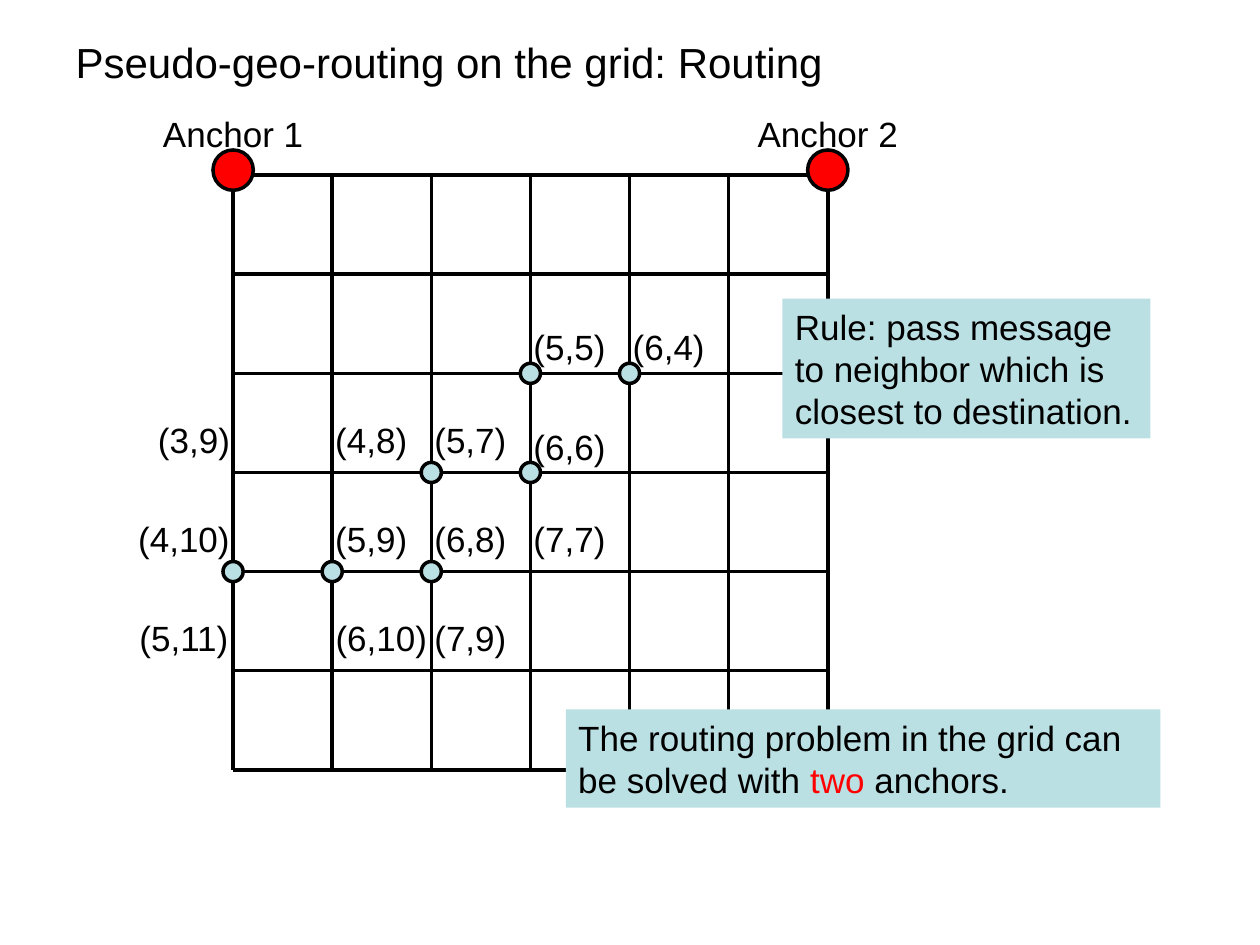
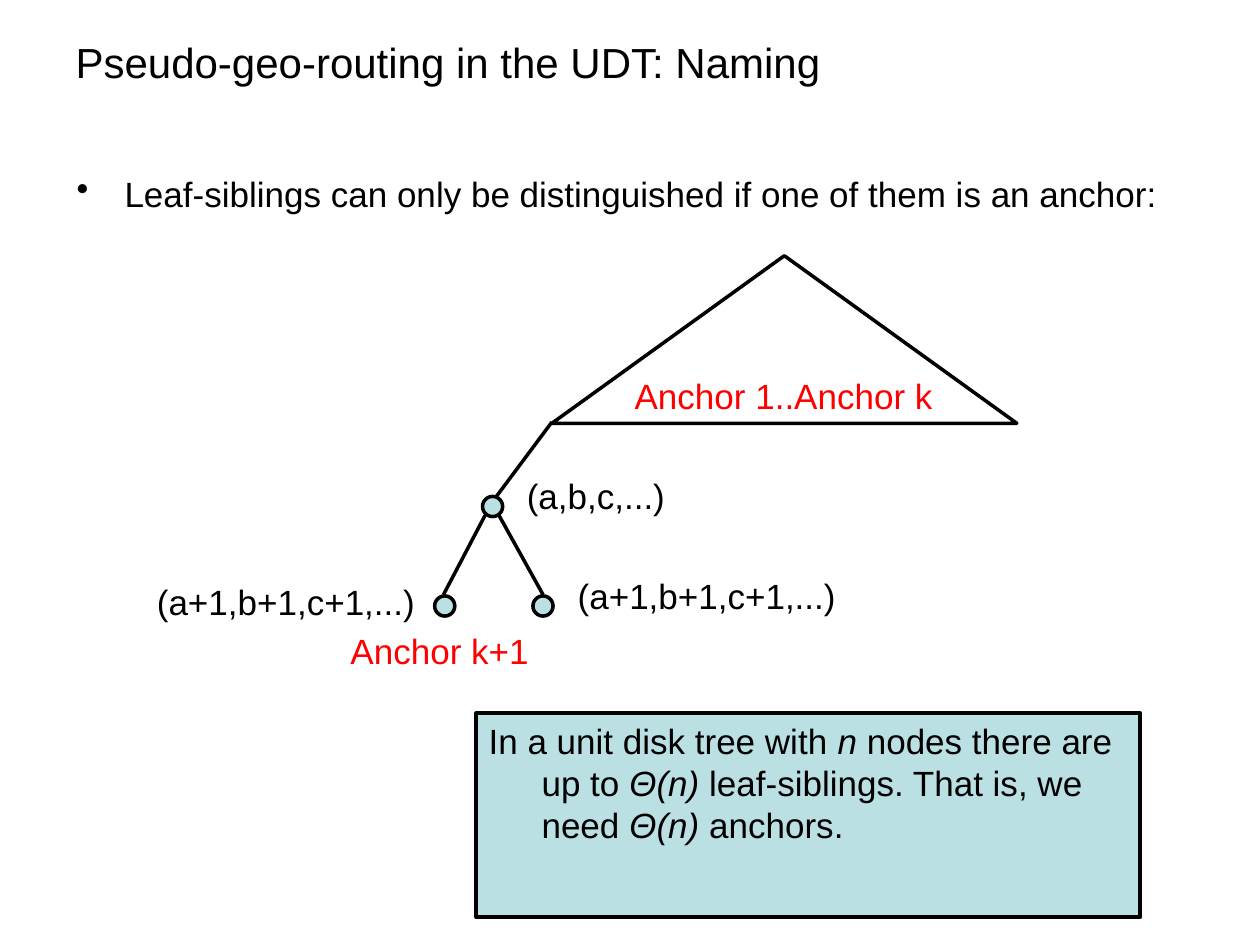
from lxml import etree
from pptx import Presentation
from pptx.dml.color import RGBColor
from pptx.enum.shapes import MSO_CONNECTOR, MSO_SHAPE
from pptx.enum.text import MSO_ANCHOR, PP_ALIGN
from pptx.oxml.ns import qn
from pptx.util import Inches, Pt

LEFT, CENTER = PP_ALIGN.LEFT, PP_ALIGN.CENTER
TOP, MIDDLE = MSO_ANCHOR.TOP, MSO_ANCHOR.MIDDLE
OVAL, RECT, PEAK = MSO_SHAPE.OVAL, MSO_SHAPE.RECTANGLE, MSO_SHAPE.ISOSCELES_TRIANGLE
STRAIGHT = MSO_CONNECTOR.STRAIGHT

FONT = "Arial"
BLACK, RED, PALE = "000000", "FF0000", "BBE0E3"
WIDE, HIGH = 10, 7.5  # slide size in columns and rows of one inch
NODE, ANCHOR = 0.16, 0.32
LABEL_W, LABEL_H = 1.42, 0.44

# the routing grid
CELLS = 6
SPAN = 4.72
GRID_X, GRID_Y = 1.85, 1.39
ROUTE = [(0, 4), (1, 4), (2, 4), (2, 3), (3, 3), (3, 2), (4, 2)]
NAMED = ROUTE + [(0, 3), (1, 3), (3, 4), (0, 5), (1, 5), (2, 5)]
LOW = [(3, 3), (3, 2), (4, 2)]  # nodes whose label sits closer to the line


def color(code):
    return RGBColor.from_string(code)


def place(shape, left, top, width, height):
    shape.left, shape.top = Inches(left), Inches(top)
    shape.width, shape.height = Inches(width), Inches(height)


def write(frame, runs, size=20, align=LEFT, anchor=MIDDLE, ink=BLACK, hang=0, bullet=None):
    """Fill a frame with one paragraph of (text, colour, italic) runs."""
    frame.word_wrap = True
    frame.vertical_anchor = anchor
    para = frame.paragraphs[0]
    if hang:
        props = para._p.get_or_add_pPr()
        props.set("marL", str(Inches(hang)))
        props.set("indent", str(-Inches(hang)))
        if bullet:
            etree.SubElement(props, qn("a:buChar")).set("char", bullet)
    para.alignment = align
    para.font.name, para.font.size = FONT, Pt(size)
    para.font.color.rgb = color(ink)
    for text, tint, slant in runs:
        run = para.add_run()
        run.text = text
        if tint:
            run.font.color.rgb = color(tint)
        if slant:
            run.font.italic = True


def plain(text):
    return [(text, None, False)]


def start(deck, title):
    slide = deck.slides.add_slide(deck.slide_layouts[5])
    head = slide.shapes.title
    place(head, 0.05 * WIDE, 0.22, 0.9 * WIDE, 0.54)
    write(head.text_frame, plain(title), size=24)
    return slide


def shape(slide, kind, box, fill=None, edge=True):
    item = slide.shapes.add_shape(kind, *map(Inches, box))
    item.shadow.inherit = False
    if fill:
        item.fill.solid()
        item.fill.fore_color.rgb = color(fill)
    else:
        item.fill.background()
    if edge:
        item.line.color.rgb = color(BLACK)
        item.line.width = Pt(2)
    else:
        item.line.fill.background()
    return item


def dot(slide, x, y, size=NODE, fill=PALE):
    shape(slide, OVAL, (x - size / 2, y - size / 2, size, size), fill)


def line(slide, x1, y1, x2, y2):
    item = slide.shapes.add_connector(STRAIGHT, *map(Inches, (x1, y1, x2, y2)))
    item.line.color.rgb = color(BLACK)
    item.line.width = Pt(2)
    etree.SubElement(item._element.spPr, qn("a:effectLst"))


def label(slide, text, x, y, width=LABEL_W, ink=BLACK):
    """Write a label centred on the point x, y."""
    box = map(Inches, (x - width / 2, y - LABEL_H / 2, width, LABEL_H))
    item = slide.shapes.add_textbox(*box)
    write(item.text_frame, plain(text), align=CENTER, ink=ink)


def note(slide, box, runs, edge=False, **style):
    item = shape(slide, RECT, box, PALE, edge)
    write(item.text_frame, runs, **style)


def spot(col, row):
    step = SPAN / CELLS
    return GRID_X + col * step, GRID_Y + row * step


def name(slide, col, row):
    """Label a grid node with its hop counts to both anchors."""
    text = f"({col + row},{CELLS - col + row})"
    shift = 0.39 if len(text) > 5 else 0.31
    x, y = spot(col, row)
    lift = 0.21 if (col, row) in LOW else 0.26
    label(slide, text, x + (shift if col else -shift), y - lift)


def routing(deck):
    slide = start(deck, "Pseudo-geo-routing on the grid: Routing")
    for i in range(CELLS + 1):
        line(slide, *spot(i, 0), *spot(i, CELLS))
        line(slide, *spot(0, i), *spot(CELLS, i))
    for number, col in enumerate((0, CELLS), 1):
        x, y = spot(col, 0)
        dot(slide, x, y - 0.04, ANCHOR, RED)
        label(slide, f"Anchor {number}", x, y - 0.33)
    for node in ROUTE:
        dot(slide, *spot(*node))
    for node in NAMED:
        name(slide, *node)
    note(slide, (6.21, 2.37, 2.92, 1.11),
         plain("Rule: pass message to neighbor which is closest to destination."))
    note(slide, (4.49, 5.63, 4.72, 0.78), [
        ("The routing problem in the grid can be solved with ", None, False),
        ("two ", RED, False),
        ("anchors.", None, False),
    ])


def naming(deck):
    slide = start(deck, "Pseudo-geo-routing in the UDT: Naming")
    body = slide.shapes.add_textbox(*map(Inches, (0.51, 1.32, 8.98, 0.44)))
    write(body.text_frame,
          plain("Leaf-siblings can only be distinguished if one of them is an anchor:"),
          anchor=TOP, hang=0.38, bullet="•")

    for x, y in [(4.31, 4.81), (3.53, 4.81), (3.91, 4.02)]:
        dot(slide, x, y)
    line(slide, 3.52, 4.72, 3.85, 4.09)
    line(slide, 4.31, 4.72, 3.96, 4.09)
    line(slide, 3.94, 3.94, 4.38, 3.35)
    shape(slide, PEAK, (4.38, 2.03, 3.69, 1.33))

    leaf = "(a+1,b+1,c+1,...)"
    label(slide, "(a,b,c,...)", 4.73, 3.93, 2.66)
    label(slide, leaf, 5.61, 4.73, 2.66)
    label(slide, leaf, 2.27, 4.77, 2.66)
    label(slide, "Anchor k+1", 3.49, 5.16, 2.36, RED)
    label(slide, "Anchor 1..Anchor k", 6.22, 3.14, 2.81, RED)
    note(slide, (3.78, 5.66, 5.27, 1.62), [
        ("In a unit disk tree with ", None, False),
        ("n ", None, True),
        ("nodes there are up to ", None, False),
        ("Θ(n) ", None, True),
        ("leaf-siblings. That is, we need ", None, False),
        ("Θ(n)", None, True),
        (" anchors.", None, False),
    ], edge=True, anchor=TOP, hang=0.42)


def main():
    deck = Presentation()
    deck.slide_width, deck.slide_height = Inches(WIDE), Inches(HIGH)
    routing(deck)
    naming(deck)
    deck.save("out.pptx")


if __name__ == "__main__":
    main()
